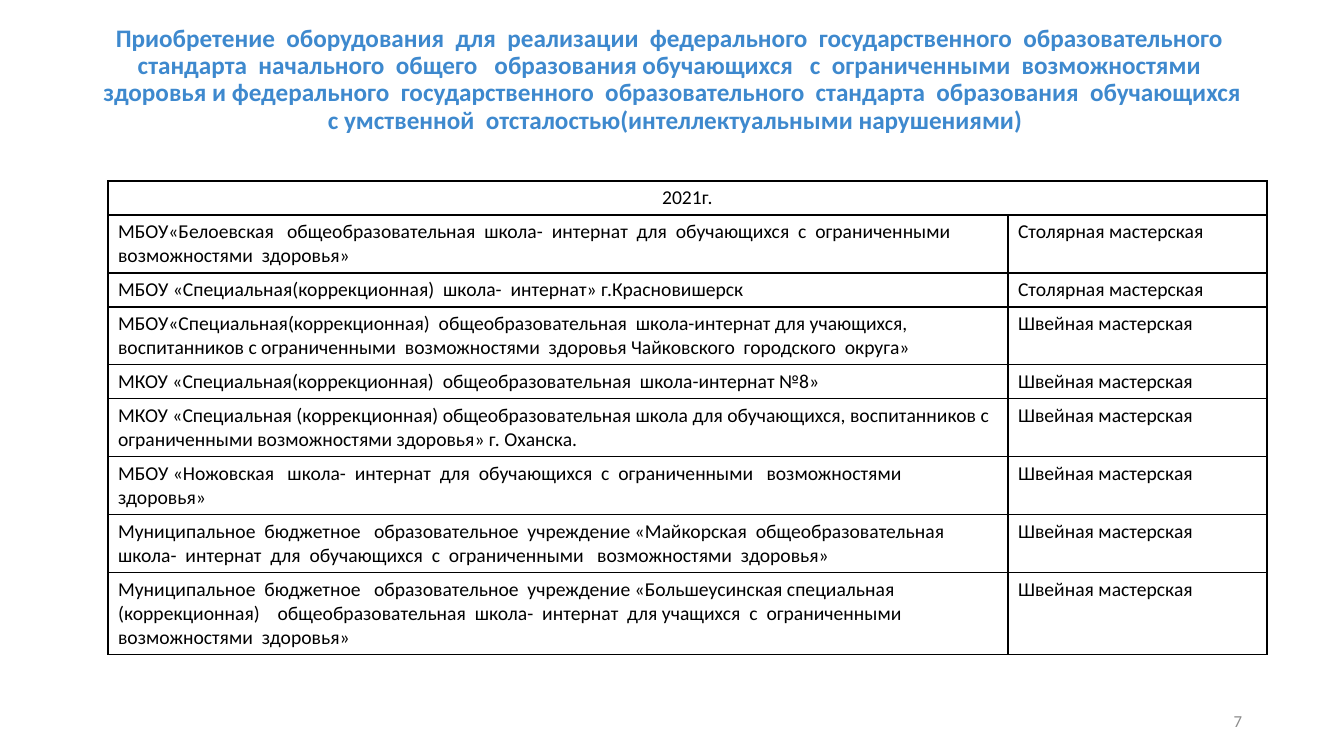
import pptx
import pptx.util
import pptx.dml.color
import pptx.enum.text
import pptx.oxml
import pptx.oxml.ns

EMU_PER_PX = 914400 / 100.8
ALIGN = pptx.enum.text.PP_ALIGN
MIDDLE = pptx.enum.text.MSO_ANCHOR.MIDDLE
BLACK = "000000"

HEADING = (
    "Приобретение  оборудования  для  реализации  федерального  государственного  "
    "образовательного  стандарта  начального  общего   образования обучающихся   "
    "с  ограниченными  возможностями  здоровья и федерального  государственного  "
    "образовательного  стандарта  образования  обучающихся  с умственной  "
    "отсталостью(интеллектуальными нарушениями)")
YEAR = "2021г."
JOINERY = "Столярная мастерская"
SEWING = "Швейная мастерская"
# School, workshop, number of text lines
SCHOOLS = [
    ("МБОУ«Белоевская   общеобразовательная  школа-  интернат  для  обучающихся  "
     "с  ограниченными   возможностями  здоровья»", JOINERY, 2),
    ("МБОУ «Специальная(коррекционная)  школа-  интернат» г.Красновишерск", JOINERY, 1),
    ("МБОУ«Специальная(коррекционная)  общеобразовательная  школа-интернат для "
     "учающихся, воспитанников с ограниченными  возможностями  здоровья "
     "Чайковского  городского  округа»", SEWING, 2),
    ("МКОУ «Специальная(коррекционная)  общеобразовательная  школа-интернат №8»",
     SEWING, 1),
    ("МКОУ «Специальная (коррекционная) общеобразовательная школа для обучающихся, "
     "воспитанников с ограниченными возможностями здоровья» г. Оханска.", SEWING, 2),
    ("МБОУ «Ножовская   школа-  интернат  для  обучающихся  с  ограниченными   "
     "возможностями  здоровья»", SEWING, 2),
    ("Муниципальное  бюджетное   образовательное  учреждение «Майкорская  "
     "общеобразовательная  школа-  интернат  для  обучающихся  с  ограниченными   "
     "возможностями  здоровья»", SEWING, 2),
    ("Муниципальное  бюджетное   образовательное  учреждение «Большеусинская "
     "специальная (коррекционная)    общеобразовательная  школа-  интернат  "
     "для учащихся  с  ограниченными   возможностями  здоровья»", SEWING, 3),
]


def px(length):
    return pptx.util.Emu(round(length * EMU_PER_PX))


def color(value):
    return pptx.dml.color.RGBColor.from_string(value)


def write(frame, text, size, ink, align=ALIGN.LEFT, bold=False):
    frame.text = text
    paragraph = frame.paragraphs[0]
    paragraph.alignment = align
    paragraph.font.name = "Calibri"
    paragraph.font.size = pptx.util.Pt(size)
    paragraph.font.bold = bold
    paragraph.font.color.rgb = color(ink)
    return paragraph


def outline_cell(cell):
    properties = cell._tc.get_or_add_tcPr()
    for position, side in enumerate(("lnL", "lnR", "lnT", "lnB")):
        border = pptx.oxml.parse_xml(
            f'<a:{side} {pptx.oxml.ns.nsdecls("a")} w="12700"><a:solidFill>'
            f'<a:srgbClr val="{BLACK}"/></a:solidFill></a:{side}>')
        properties.insert(position, border)


def add_heading(slide, left, top, width, height):
    heading = slide.shapes.title
    heading.left, heading.top = px(left), px(top)
    heading.width, heading.height = px(width), px(height)
    frame = heading.text_frame
    frame.word_wrap = True
    frame.auto_size = pptx.enum.text.MSO_AUTO_SIZE.NONE
    frame.vertical_anchor = MIDDLE
    paragraph = write(frame, HEADING, 18, "3E89CE", ALIGN.CENTER, True)
    paragraph.line_spacing = 0.9


def add_school_table(slide, left, top, width, workshop_width):
    line_counts = [1] + [lines for _, _, lines in SCHOOLS]
    heights = [10 + 24 * lines for lines in line_counts]
    schools = slide.shapes.add_table(
        len(heights), 2, px(left), px(top), px(width), px(sum(heights))).table
    schools.first_row = schools.horz_banding = False
    schools.columns[0].width = px(width - workshop_width)
    schools.columns[1].width = px(workshop_width)
    for row, height in zip(schools.rows, heights):
        row.height = px(height)
    for cell in schools.iter_cells():
        cell.fill.background()
        outline_cell(cell)

    # Year across both columns, then one row per school
    year = schools.cell(0, 0)
    year.merge(schools.cell(0, 1))
    write(year.text_frame, YEAR, 14, BLACK, ALIGN.CENTER)
    for row, (school, workshop, _) in enumerate(SCHOOLS, 1):
        write(schools.cell(row, 0).text_frame, school, 14, BLACK)
        write(schools.cell(row, 1).text_frame, workshop, 14, BLACK)


def add_page_number(slide, left, top, width, height):
    page = slide.shapes.add_textbox(px(left), px(top), px(width), px(height))
    page.text_frame.word_wrap = True
    page.text_frame.vertical_anchor = MIDDLE
    write(page.text_frame, "7", 12, "8C8C8C", ALIGN.RIGHT)


def main():
    deck = pptx.Presentation()
    deck.slide_width, deck.slide_height = px(1344), px(756)
    slide = deck.slides.add_slide(deck.slide_layouts[5])
    add_heading(slide, 93, 40, 1159, 80)
    add_school_table(slide, 108, 181, 1159, 259)
    add_page_number(slide, 950, 701, 302, 40)
    deck.save("out.pptx")


if __name__ == "__main__":
    main()
